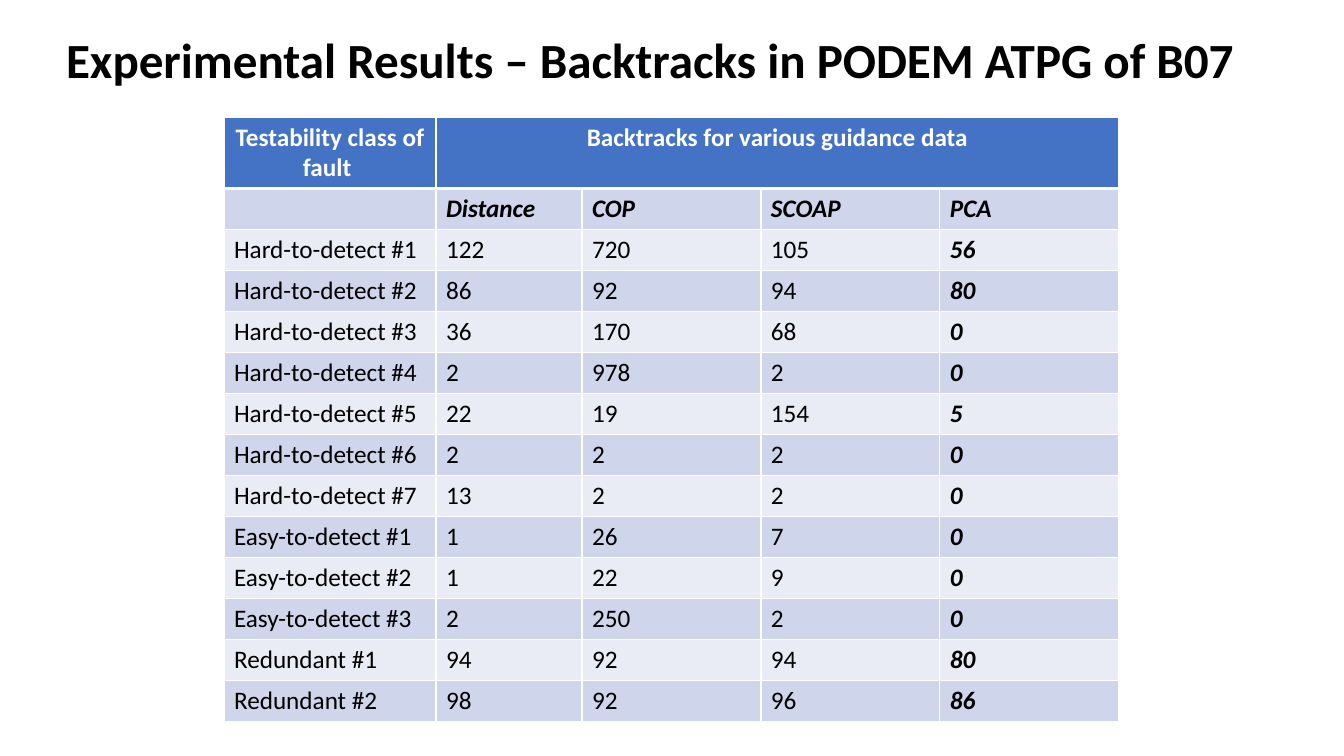
from lxml.etree import SubElement
from pptx import Presentation
from pptx.dml.color import RGBColor
from pptx.enum.text import MSO_ANCHOR, MSO_AUTO_SIZE, PP_ALIGN
from pptx.oxml.ns import qn
from pptx.util import Inches, Pt

PX = Inches(1) / 100.8
FONT = "Calibri"
BLACK = RGBColor(0x00, 0x00, 0x00)
WHITE = RGBColor(0xFF, 0xFF, 0xFF)
BLUE = RGBColor(0x44, 0x72, 0xC4)
DARK = RGBColor(0xCF, 0xD5, 0xEA)
LIGHT = RGBColor(0xE9, 0xEB, 0xF5)

WIDTHS = [212, 146, 179, 179, 179]
HEIGHT = 41
ROWS = [
    ("Testability class of fault ", "Backtracks for various guidance data", "", "", ""),
    ("", "Distance", "COP", "SCOAP", "PCA"),
    ("Hard-to-detect #1", "122", "720", "105", "56"),
    ("Hard-to-detect #2", "86", "92", "94", "80"),
    ("Hard-to-detect #3", "36", "170", "68", "0"),
    ("Hard-to-detect #4", "2", "978", "2", "0"),
    ("Hard-to-detect #5", "22", "19", "154", "5"),
    ("Hard-to-detect #6", "2", "2", "2", "0"),
    ("Hard-to-detect #7", "13", "2", "2", "0"),
    ("Easy-to-detect #1", "1", "26", "7", "0"),
    ("Easy-to-detect #2", "1", "22", "9", "0"),
    ("Easy-to-detect #3", "2", "250", "2", "0"),
    ("Redundant #1", "94", "92", "94", "80"),
    ("Redundant #2", "98", "92", "96", "86"),
]


def px(n):
    return round(n * PX)


def add_run(para, text, size, color, bold, italic=False):
    run = para.add_run()
    run.text = text
    font = run.font
    font.name, font.size = FONT, Pt(size)
    font.bold, font.italic = bold, italic
    font.color.rgb = color


deck = Presentation()
deck.slide_width, deck.slide_height = px(1344), px(756)
slide = deck.slides.add_slide(deck.slide_layouts[5])

# Title
title = slide.shapes.title
title.left, title.top, title.width, title.height = px(56), px(8), px(1265), px(109)
frame = title.text_frame
frame.word_wrap = True
frame.auto_size = MSO_AUTO_SIZE.NONE
frame.vertical_anchor = MSO_ANCHOR.MIDDLE
para = frame.paragraphs[0]
para.alignment = PP_ALIGN.LEFT
para.line_spacing = 0.9
add_run(para, "Experimental Results – Backtracks in PODEM ATPG of B07", 35.1, BLACK, True)

# Table
table = slide.shapes.add_table(
    len(ROWS), len(WIDTHS), px(224), px(117), px(sum(WIDTHS)), px(HEIGHT * len(ROWS))
).table
for col, width in zip(table.columns, WIDTHS):
    col.width = px(width)
table.cell(0, 1).merge(table.cell(0, 4))

for r, row in enumerate(ROWS):
    head = r == 0
    for c, text in enumerate(row):
        cell = table.cell(r, c)
        # Borders come before the fill in the cell properties
        props = cell._tc.get_or_add_tcPr()
        for side in ("lnL", "lnR", "lnT", "lnB"):
            thick = (head and side == "lnB") or (r == 1 and side == "lnT")
            line = SubElement(props, qn(f"a:{side}"), w=str(Pt(3 if thick else 1)))
            fill = SubElement(line, qn("a:solidFill"))
            SubElement(fill, qn("a:srgbClr"), val=str(WHITE))
        cell.fill.solid()
        cell.fill.fore_color.rgb = BLUE if head else DARK if r % 2 else LIGHT
        para = cell.text_frame.paragraphs[0]
        para.alignment = PP_ALIGN.CENTER if head else PP_ALIGN.LEFT
        if text:
            strong = r == 1 or c == 4
            add_run(para, text, 18, WHITE if head else BLACK, head or strong, strong)

deck.save("out.pptx")
